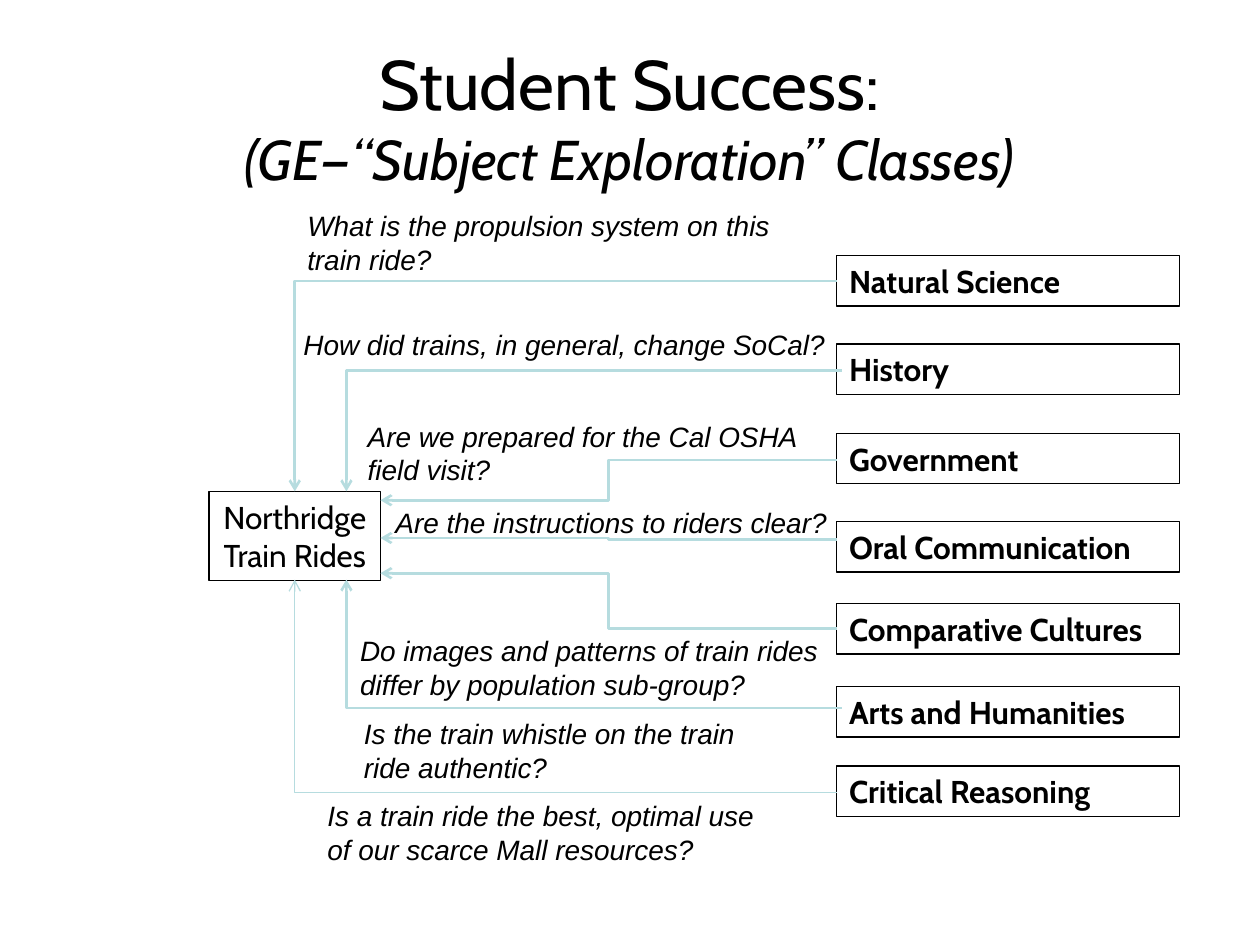
from lxml import etree
from pptx import Presentation
from pptx import util as u
from pptx.dml.color import RGBColor
from pptx.enum import shapes, text
from pptx.oxml import ns

PX = 9144  # 100 px to the inch
BLACK = RGBColor(0x00, 0x00, 0x00)
TEAL = RGBColor(0xB6, 0xDC, 0xDF)
HEADING_FONT = "Cabin"
QUESTION_FONT = "Arial"

SUBJECT_LEFT, SUBJECT_WIDTH, SUBJECT_HEIGHT = 664, 272, 40
SUBJECTS = [
    ("Natural Science", 203),
    ("History", 273),
    ("Government", 344),
    ("Oral Communication", 414),
    ("Comparative Cultures", 479),
    ("Arts and Humanities", 545),
    ("Critical Reasoning", 608),
]
QUESTIONS = [
    ("What is the propulsion system on this train ride?", (234, 161, 431, 64)),
    ("How did trains, in general, change SoCal?", (231, 255, 439, 37)),
    ("Are we prepared for the Cal OSHA\nfield visit?", (282, 328, 431, 64)),
    ("Are the instructions to riders clear?", (304, 396, 431, 37)),
    ("Do images and patterns of train rides differ by population sub-group?",
     (276, 498, 387, 64)),
    ("Is the train whistle on the train ride authentic?", (279, 564, 349, 64)),
    ("Is a train ride the best, optimal use of our scarce Mall resources?",
     (250, 629, 367, 64)),
]
HUB_BOX = (166, 390, 136, 71)
# Start, end, bends and line width of each arrow
ARROWS = [
    ((664, 223), (234, 390), 1, 1.5),
    ((668, 294), (275, 390), 1, 1.5),
    ((664, 365), (302, 397), 2, 1.5),
    ((664, 428), (302, 427), 2, 1.5),
    ((664, 499), (302, 455), 2, 1.5),
    ((668, 562), (275, 460), 1, 1.5),
    ((664, 629), (234, 460), 1, 0.75),
]


def px(*lengths):
    return [u.Emu(length * PX) for length in lengths]


def write(frame, content, size, font, bold=False, italic=False,
          align=text.PP_ALIGN.LEFT, anchor=text.MSO_ANCHOR.TOP, wrap=True):
    """Fill a text frame, one paragraph for each line of content."""
    frame.word_wrap = wrap
    frame.vertical_anchor = anchor
    frame.text = content
    for paragraph in frame.paragraphs:
        paragraph.alignment = align
        for run in paragraph.runs:
            style(run, size, font, bold, italic)


def style(run, size, font, bold=False, italic=False):
    run.font.size = u.Pt(size)
    run.font.name = font
    run.font.bold = bold
    run.font.italic = italic
    run.font.color.rgb = BLACK


def add_title(slide, box):
    title = slide.shapes.title
    title.left, title.top, title.width, title.height = px(*box)
    title.text_frame.vertical_anchor = text.MSO_ANCHOR.MIDDLE
    paragraph = title.text_frame.paragraphs[0]
    paragraph.alignment = text.PP_ALIGN.CENTER
    heading = paragraph.add_run()
    heading.text = "Student Success:"
    style(heading, 40, HEADING_FONT)
    paragraph.add_line_break()
    subheading = paragraph.add_run()
    subheading.text = "(GE—“Subject Exploration” Classes)"
    style(subheading, 32, HEADING_FONT, italic=True)


def add_outlined_box(slide, box, content, **text_format):
    shape = slide.shapes.add_shape(shapes.MSO_SHAPE.RECTANGLE, *px(*box))
    shape.shadow.inherit = False
    shape.fill.background()
    shape.line.color.rgb = BLACK
    shape.line.width = u.Pt(0.75)
    write(shape.text_frame, content, 18, HEADING_FONT, **text_format)


def add_question(slide, box, content):
    shape = slide.shapes.add_textbox(*px(*box))
    write(shape.text_frame, content, 16, QUESTION_FONT, italic=True)


def add_arrow(slide, start, end, bends, width):
    """Add an elbow arrow that leaves its start horizontally."""
    arrow = slide.shapes.add_connector(
        shapes.MSO_CONNECTOR.ELBOW, *px(*start, *end))
    arrow.line.color.rgb = TEAL
    arrow.line.width = u.Pt(width)
    properties = arrow._element.spPr
    geometry = properties.find(ns.qn("a:prstGeom"))
    geometry.set("prst", f"bentConnector{bends + 1}")
    line = properties.find(ns.qn("a:ln"))
    etree.SubElement(line, ns.qn("a:tailEnd"), type="arrow")
    etree.SubElement(properties, ns.qn("a:effectLst"))


def add_subject_map(slide):
    add_outlined_box(slide, HUB_BOX, "Northridge\nTrain Rides", wrap=False,
                     align=text.PP_ALIGN.CENTER, anchor=text.MSO_ANCHOR.MIDDLE)
    for subject, top in SUBJECTS:
        box = (SUBJECT_LEFT, top, SUBJECT_WIDTH, SUBJECT_HEIGHT)
        add_outlined_box(slide, box, subject, bold=True)
    for question, box in QUESTIONS:
        add_question(slide, box, question)
    for arrow in ARROWS:
        add_arrow(slide, *arrow)


def main():
    presentation = Presentation()
    presentation.slide_width, presentation.slide_height = px(1000, 750)
    slide = presentation.slides.add_slide(presentation.slide_layouts[5])
    add_title(slide, (50, 30, 900, 125))
    add_subject_map(slide)
    presentation.save("out.pptx")


if __name__ == "__main__":
    main()
